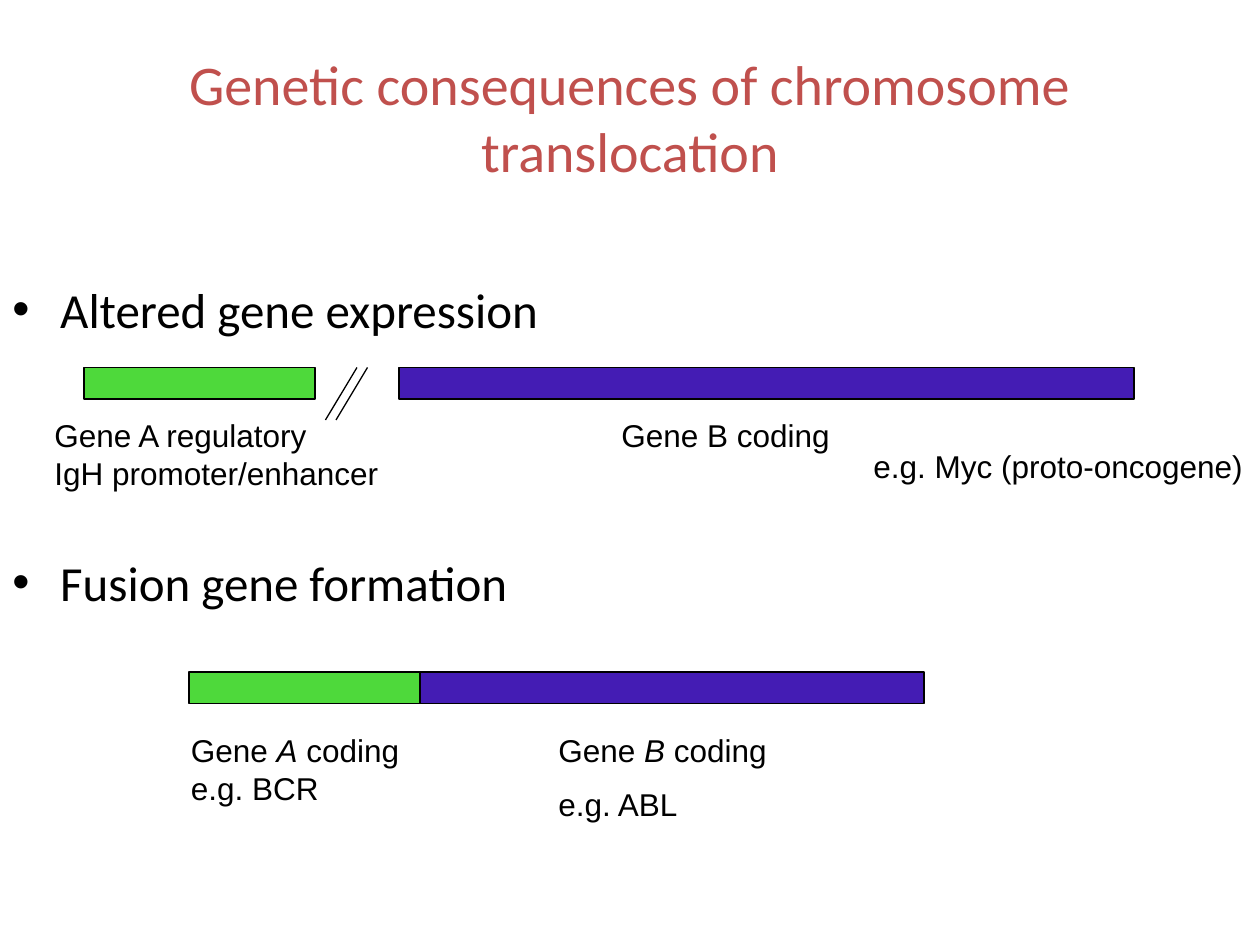
from lxml.etree import SubElement as Sub
from pptx import Presentation
from pptx.dml.color import RGBColor
from pptx.enum.shapes import MSO_CONNECTOR as Link, MSO_SHAPE as Kind
from pptx.enum.text import MSO_ANCHOR as Anchor, PP_ALIGN as Align
from pptx.oxml.ns import qn
from pptx.util import Inches, Pt

# Grid: 120 columns by 90 rows, twelve cells to the inch
CELL = Inches(1) // 12
GREEN, PURPLE, RED, BLACK = "4ED93B", "441CB4", "C0504D", "000000"


def grid(*cells):
    return [round(n * CELL) for n in cells]


def color(fmt, code):
    fmt.rgb = RGBColor.from_string(code)


def add_text(slide, box, lines, size=18, face="Arial", ink=BLACK, gap=0):
    """Each line is a list of runs; every second run is italic."""
    frame = slide.shapes.add_textbox(*grid(*box)).text_frame
    frame.word_wrap = True
    for i, runs in enumerate(lines):
        para = frame.paragraphs[0] if i == 0 else frame.add_paragraph()
        para.font.size, para.font.name = Pt(size), face
        color(para.font.color, ink)
        para.space_before = Pt(gap if i else 0)
        for j, words in enumerate(runs):
            run = para.add_run()
            run.text = words
            if j % 2:
                run.font.italic = True
    return frame


def add_bullet(para, indent):
    props = para._p.get_or_add_pPr()
    props.set("marL", str(indent))
    props.set("indent", str(-indent))
    Sub(props, qn("a:buFont")).set("typeface", "Arial")
    Sub(props, qn("a:buChar")).set("char", "•")


def add_gene(slide, col, row, width, fill):
    bar = slide.shapes.add_shape(Kind.RECTANGLE, *grid(col, row, width, 3))
    bar.shadow.inherit = False
    bar.fill.solid()
    color(bar.fill.fore_color, fill)
    color(bar.line.color, BLACK)
    bar.line.width = Pt(0.75)


def add_slash(slide, col, row):
    line = slide.shapes.add_connector(
        Link.STRAIGHT, *grid(col, row, col - 3, row + 5))
    color(line.line.color, BLACK)
    line.line.width = Pt(0.75)
    Sub(line._element.spPr, qn("a:effectLst"))


def main():
    deck = Presentation()
    deck.slide_width, deck.slide_height = Inches(10), Inches(7.5)
    slide = deck.slides.add_slide(deck.slide_layouts[6])

    # Title
    title = add_text(slide, (6, 3.6, 108, 15),
                     [["Genetic consequences of chromosome translocation"]],
                     32, "Calibri", RED)
    title.vertical_anchor = Anchor.MIDDLE
    title.paragraphs[0].alignment = Align.CENTER

    # Two headings, spaced to leave room for the first diagram
    heads = add_text(slide, (0, 26, 114, 59.4),
                     [["Altered gene expression"], ["Fusion gene formation"]],
                     28, "Calibri", gap=122.4)
    for para in heads.paragraphs:
        add_bullet(para, Inches(0.38))

    # Altered expression: split genes
    add_gene(slide, 8, 35, 22, GREEN)
    for col in (34, 35):
        add_slash(slide, col, 35)
    add_gene(slide, 38, 35, 70, PURPLE)
    add_text(slide, (4, 39, 39, 8.5),
             [["Gene A regulatory"], ["IgH promoter/enhancer"]])
    add_text(slide, (58, 39, 23, 4.8), [["Gene B coding"]])
    add_text(slide, (82, 42, 38, 4.8), [["e.g. Myc (proto-oncogene)"]])

    # Fusion: joined genes
    add_gene(slide, 40, 64, 48, PURPLE)
    add_gene(slide, 18, 64, 22, GREEN)
    add_text(slide, (17, 69, 23, 8.5),
             [["Gene ", "A", " coding"], ["e.g. BCR"]])
    add_text(slide, (52, 69, 36, 10.3),
             [["Gene ", "B", " coding"], ["e.g. ABL"]], gap=9.6)

    deck.save("out.pptx")


if __name__ == "__main__":
    main()
